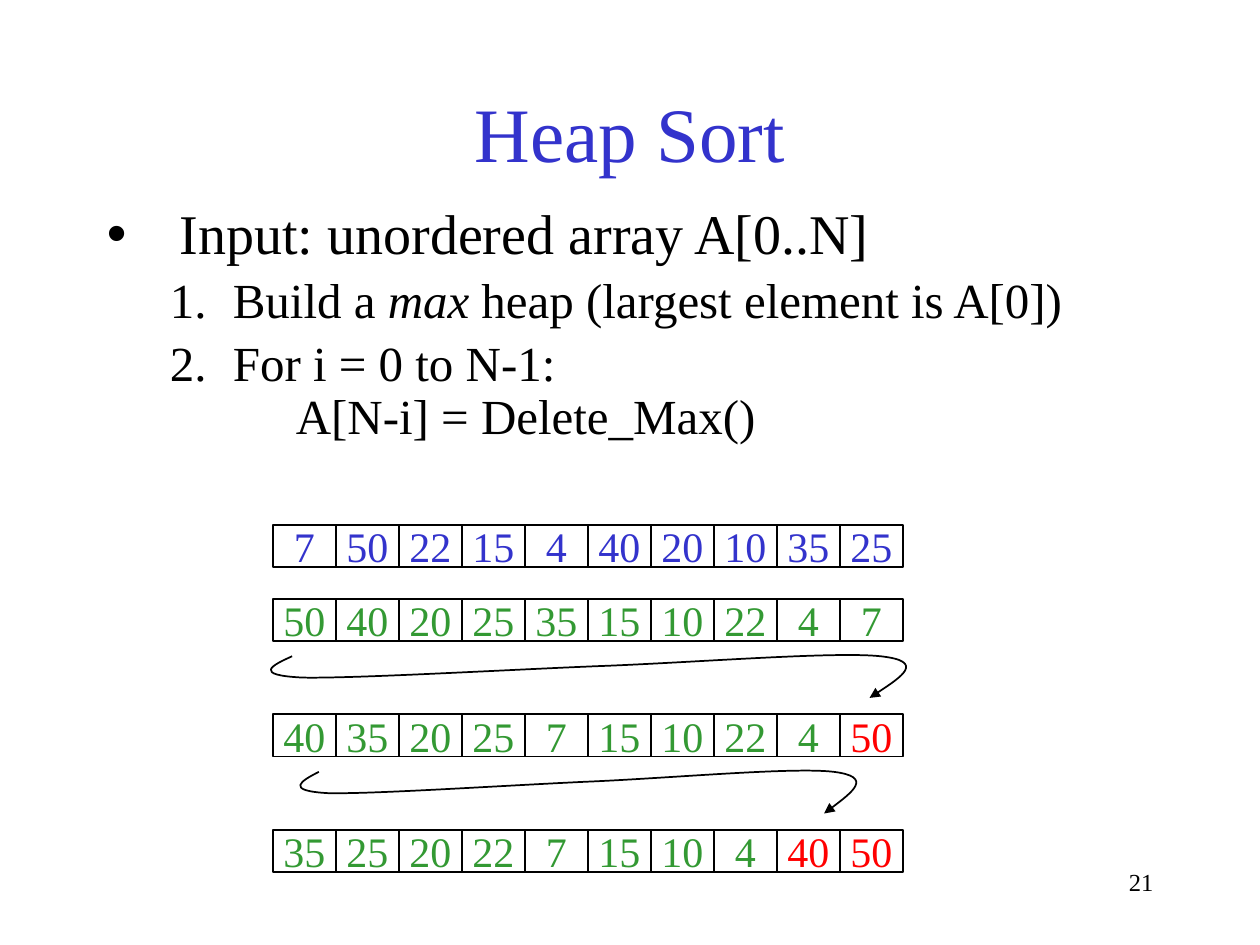
from lxml.etree import SubElement
from pptx import Presentation
from pptx.dml.color import RGBColor
from pptx.enum.shapes import MSO_SHAPE as SHAPE
from pptx.enum.text import MSO_ANCHOR as ANCHOR, MSO_AUTO_SIZE as AUTO_SIZE, PP_ALIGN as ALIGN
from pptx.oxml.ns import qn
from pptx.util import Cm, Pt

BLUE = RGBColor(0x33, 0x33, 0xCC)
GREEN = RGBColor(0x33, 0x99, 0x33)
RED = RGBColor(0xFF, 0x00, 0x00)
BLACK = RGBColor(0x00, 0x00, 0x00)


def add_text(p, text, size, color=BLACK, italic=False):
    r = p.add_run()
    r.text = text
    r.font.name = "Times New Roman"
    r.font.size = Pt(size)
    r.font.color.rgb = color
    r.font.italic = italic


def place(s, left, top, width, height):
    s.left, s.top, s.width, s.height = Cm(left), Cm(top), Cm(width), Cm(height)


prs = Presentation()
prs.slide_width, prs.slide_height = Cm(25.4), Cm(19.05)
slide = prs.slides.add_slide(prs.slide_layouts[1])

# Title
title = slide.shapes.title
place(title, 1.9, 1.06, 21.6, 3.18)
title.text_frame.vertical_anchor = ANCHOR.MIDDLE
p = title.text_frame.paragraphs[0]
p.alignment = ALIGN.CENTER
add_text(p, "Heap Sort", 44, BLUE)

# Algorithm: (level, size, left margin, hanging indent, runs)
body = slide.placeholders[1]
place(body, 1.9, 4.02, 21.6, 5.5)
tf = body.text_frame
tf.auto_size = AUTO_SIZE.NONE
lines = [
    (0, 32, 1.47, 1.47, ["Input: unordered array A[0..N]"]),
    (1, 28, 2.54, 1.27, ["Build a ", "max", " heap (largest element is A[0])"]),
    (1, 28, 2.54, 1.27, ["For i = 0 to N-1:", "\n", "\tA[N-i] = Delete_Max()"]),
]
for i, (level, size, margin, hanging, texts) in enumerate(lines):
    p = tf.paragraphs[0] if i == 0 else tf.add_paragraph()
    p.level = level
    p.line_spacing = 0.9
    p.space_before = Pt(size * 0.2)
    pPr = p._p.get_or_add_pPr()
    pPr.set("marL", str(Cm(margin)))
    pPr.set("indent", str(-Cm(hanging)))
    if level == 0:
        SubElement(pPr, qn("a:buChar"), char="•")
    else:
        SubElement(pPr, qn("a:buAutoNum"), type="arabicPeriod")
    for text in texts:
        if text == "\n":
            p.add_line_break()
        else:
            add_text(p, text, size, italic=text == "max")

# Array states: (top, values, colour, number of sorted cells at the end)
CELL_W, CELL_H, ARRAY_LEFT = 1.27, 0.85, 5.5
HEAP_TOP, STEP = 12.07, 2.33
arrays = [
    (10.58, [7, 50, 22, 15, 4, 40, 20, 10, 35, 25], BLUE, 0),
    (HEAP_TOP, [50, 40, 20, 25, 35, 15, 10, 22, 4, 7], GREEN, 0),
    (HEAP_TOP + STEP, [40, 35, 20, 25, 7, 15, 10, 22, 4, 50], GREEN, 1),
    (HEAP_TOP + 2 * STEP, [35, 25, 20, 22, 7, 15, 10, 4, 40, 50], GREEN, 2),
]
for top, values, color, done in arrays:
    for col, value in enumerate(values):
        s = slide.shapes.add_shape(SHAPE.RECTANGLE, Cm(ARRAY_LEFT + col * CELL_W), Cm(top),
                                   Cm(CELL_W), Cm(CELL_H))
        s.shadow.inherit = False
        s.fill.background()
        s.line.color.rgb = BLACK
        s.line.width = Pt(1)
        tf = s.text_frame
        tf.word_wrap = False
        tf.vertical_anchor = ANCHOR.MIDDLE
        p = tf.paragraphs[0]
        p.alignment = ALIGN.CENTER
        add_text(p, str(value), 24, RED if col >= len(values) - done else color)

# Arrows for moving the maximum: start point, then Bézier control points in threes
SWOOSH = [(0.81, 0.1), (0.41, 0.28), (0, 0.48), (1.02, 0.53), (2.06, 0.55), (5, 0.38),
          (6.96, 0.3), (8.89, 0.23), (11.73, 0), (12.67, 0.1), (13.59, 0.2), (13, 0.58),
          (12.45, 0.94)]
for left, top, scale in [(5.08, 13.13, 1), (5.72, 13.13 + STEP, 0.875)]:
    points = [(Cm(left + x * scale), Cm(top + y)) for x, y in SWOOSH]
    builder = slide.shapes.build_freeform(*points[0])
    builder.add_line_segments(points[1:], close=False)
    s = builder.convert_to_shape()
    s.shadow.inherit = False
    s.fill.background()
    s.line.color.rgb = BLACK
    s.line.width = Pt(1)
    SubElement(s.line._get_or_add_ln(), qn("a:tailEnd"), type="triangle")
    segments = list(s._element.iter(qn("a:lnTo")))
    for i in range(0, len(segments), 3):
        curve = SubElement(segments[i].getparent(), qn("a:cubicBezTo"))
        for segment in segments[i:i + 3]:
            curve.append(segment[0])
            segment.getparent().remove(segment)

# Page number
s = slide.shapes.add_textbox(Cm(18.2), Cm(17.35), Cm(5.3), Cm(1.27))
s.text_frame.word_wrap = True
p = s.text_frame.paragraphs[0]
p.alignment = ALIGN.RIGHT
add_text(p, "21", 14)

prs.save("out.pptx")
